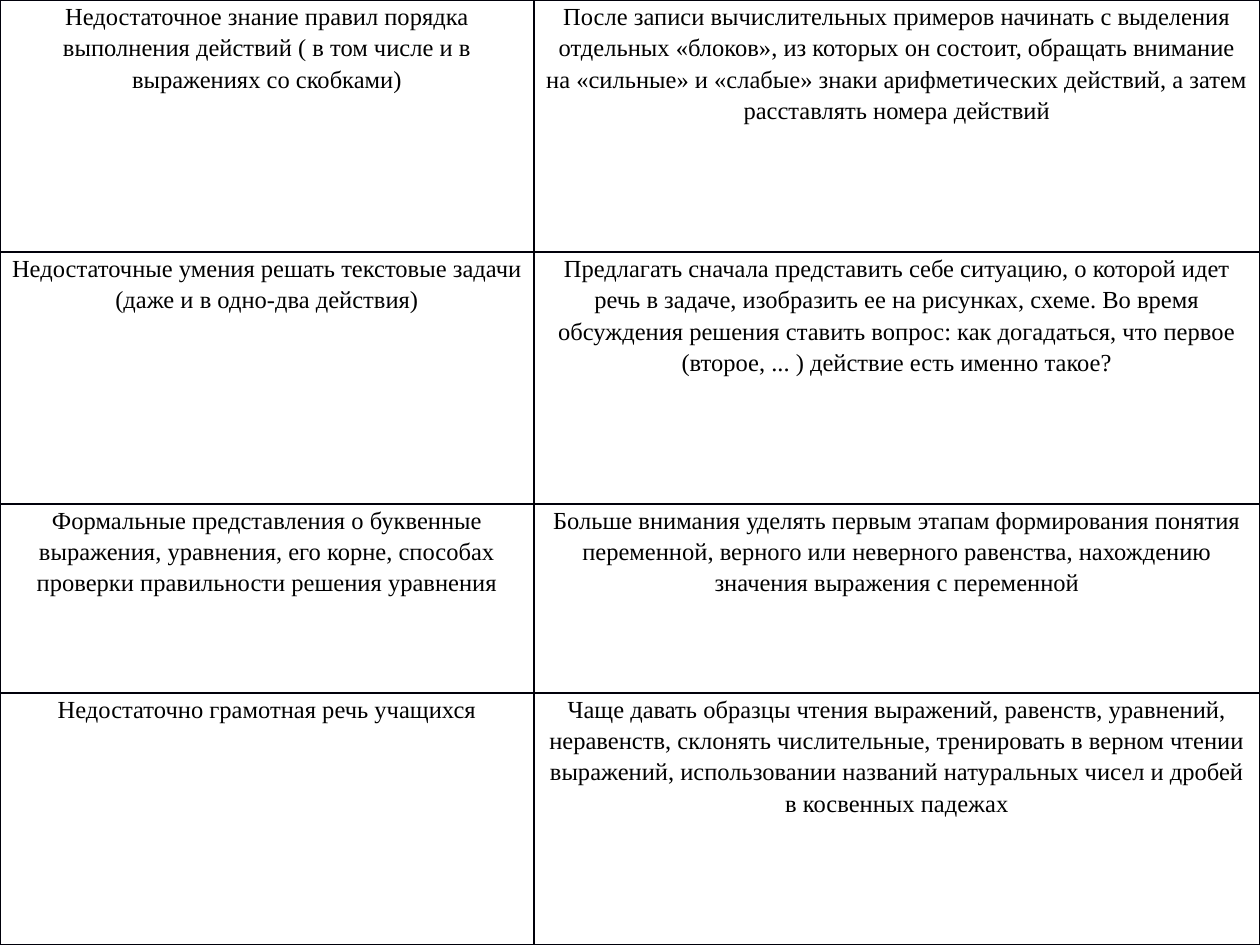
from lxml import etree
from pptx import Presentation
from pptx.dml.color import RGBColor
from pptx.enum.text import MSO_ANCHOR, PP_ALIGN
from pptx.oxml.ns import qn
from pptx.util import Pt

CENTER = PP_ALIGN.CENTER
TOP = MSO_ANCHOR.TOP
BLACK = RGBColor(0x00, 0x00, 0x00)
WHITE = RGBColor(0xFF, 0xFF, 0xFF)
BORDER = RGBColor(0x00, 0x00, 0x0A)
FONT = "Times New Roman"
PX = 914400 // 126
WIDTH, HEIGHT = 1260, 945
COLUMN_WIDTHS = [534, 726]
ROW_HEIGHTS = [252, 252, 189, 252]
SIDE_MARGIN = 10

DIFFICULTIES = [
    ("Недостаточное знание правил порядка выполнения действий ( в том числе и в выражениях со скобками)",
     "После записи вычислительных примеров начинать с выделения отдельных «блоков», из которых он состоит, "
     "обращать внимание на «сильные» и «слабые» знаки арифметических действий, а затем расставлять номера действий"),
    ("Недостаточные умения решать текстовые задачи (даже и в одно-два действия)",
     "Предлагать сначала представить себе ситуацию, о которой идет речь в задаче, изобразить ее на рисунках, схеме. "
     "Во время обсуждения решения ставить вопрос: как догадаться, что первое (второе, ... ) действие есть именно такое?"),
    ("Формальные представления о буквенные выражения, уравнения, его корне, "
     "способах проверки правильности решения уравнения",
     "Больше внимания уделять первым этапам формирования понятия переменной, верного или неверного равенства, "
     "нахождению значения выражения с переменной"),
    ("Недостаточно грамотная речь учащихся",
     "Чаще давать образцы чтения выражений, равенств, уравнений, неравенств, склонять числительные, "
     "тренировать в верном чтении выражений, использовании названий натуральных чисел и дробей в косвенных падежах"),
]


def add_borders(cell):
    properties = cell._tc.get_or_add_tcPr()
    for side in ("a:lnL", "a:lnR", "a:lnT", "a:lnB"):
        line = etree.SubElement(properties, qn(side), w=str(Pt(1)))
        fill = etree.SubElement(line, qn("a:solidFill"))
        etree.SubElement(fill, qn("a:srgbClr"), val=str(BORDER))


presentation = Presentation()
presentation.slide_width = WIDTH * PX
presentation.slide_height = HEIGHT * PX
slide = presentation.slides.add_slide(presentation.slide_layouts[6])

table = slide.shapes.add_table(
    len(ROW_HEIGHTS), len(COLUMN_WIDTHS), 0, 0, WIDTH * PX, HEIGHT * PX
).table
table.first_row = False
table.horz_banding = False
for column, width in zip(table.columns, COLUMN_WIDTHS):
    column.width = width * PX

for row, height, texts in zip(table.rows, ROW_HEIGHTS, DIFFICULTIES):
    row.height = height * PX
    for cell, text in zip(row.cells, texts):
        add_borders(cell)
        cell.fill.solid()
        cell.fill.fore_color.rgb = WHITE
        cell.margin_left = cell.margin_right = SIDE_MARGIN * PX
        cell.margin_top = cell.margin_bottom = 0
        cell.vertical_anchor = TOP
        paragraph = cell.text_frame.paragraphs[0]
        paragraph.alignment = CENTER
        paragraph.line_spacing = 1.15
        run = paragraph.add_run()
        run.text = text
        run.font.name = FONT
        run.font.size = Pt(14)
        run.font.color.rgb = BLACK

presentation.save("out.pptx")
